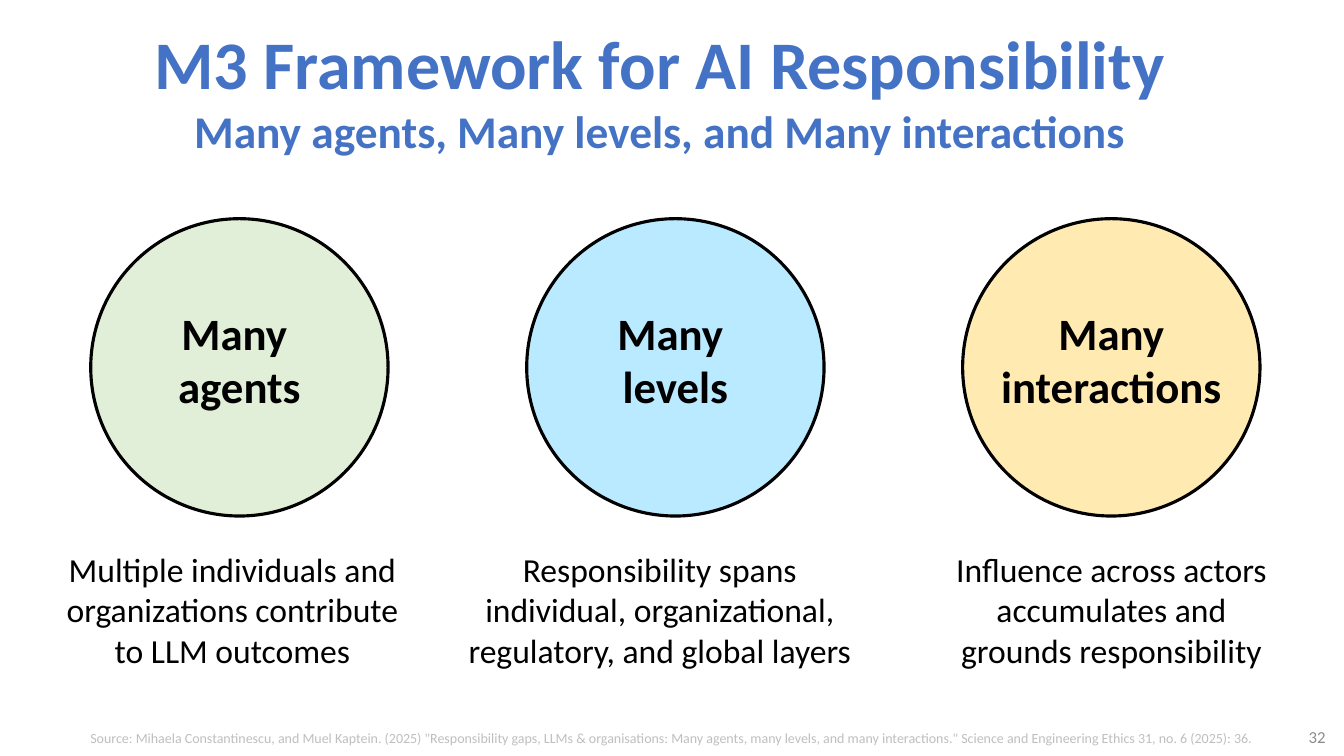
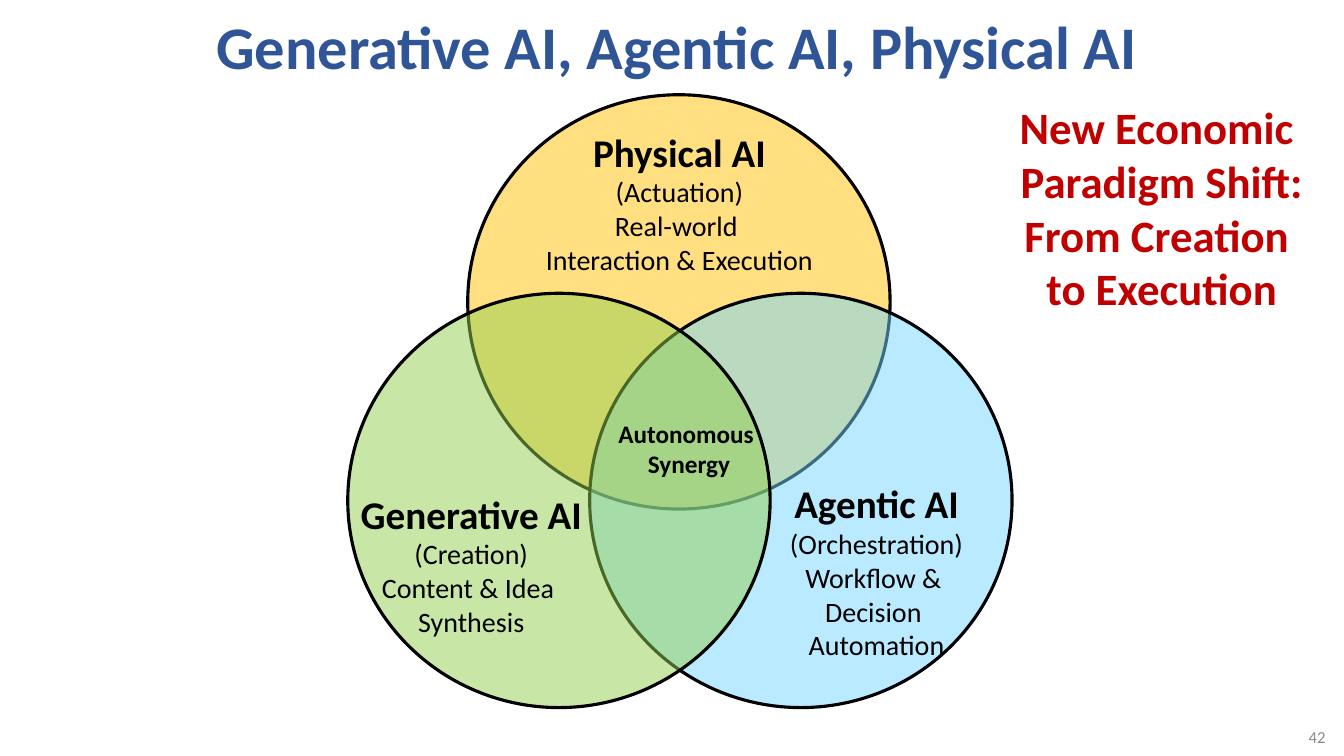
from pptx import Presentation
from pptx.dml.color import RGBColor
from pptx.enum.shapes import MSO_SHAPE
from pptx.enum.text import MSO_ANCHOR, MSO_AUTO_SIZE, PP_ALIGN
from pptx.oxml.ns import qn
from pptx.util import Pt
from lxml import etree

OVAL = MSO_SHAPE.OVAL
TOP, MIDDLE = MSO_ANCHOR.TOP, MSO_ANCHOR.MIDDLE
CENTER, RIGHT = PP_ALIGN.CENTER, PP_ALIGN.RIGHT
FIXED = MSO_AUTO_SIZE.NONE
TITLE_ONLY = 5

BLACK, GRAY, PALE = "000000", "8C8C8C", "BFBFBF"
BLUE, NAVY, RED = "4472C4", "2F5597", "C00000"
SKY, MINT, SAND = "76D6FF", "C5E0B4", "FFD966"
GOLD, LIME = "FFC000", "92D050"


def color(code):
    return RGBColor.from_string(code)


def put(item, values):
    for name, value in values.items():
        setattr(item, name, value)


class Deck:
    font = "Calibri"
    edge = 2.25
    alpha = 50

    def __init__(self):
        self.prs = Presentation()
        put(self.prs, {"slide_width": Pt(960), "slide_height": Pt(540)})

    def start(self, number, lines, box, tint):
        """Add a slide with its title lines and page number."""
        layout = self.prs.slide_layouts[TITLE_ONLY]
        self.slide = self.prs.slides.add_slide(layout)
        title = self.slide.shapes.title
        left, top, width, height = map(Pt, box)
        put(title, {"left": left, "top": top, "width": width, "height": height})
        self.fill(title.text_frame, lines, tint, True, anchor=MIDDLE)
        self.text((878.4, 517, 75.6, 18.7), [(number, 12)], GRAY,
                  align=RIGHT, anchor=MIDDLE)

    def fill(self, frame, lines, tint=BLACK, bold=False, align=CENTER,
             anchor=TOP, wrap=True):
        """Write (text, size) or (text, size, bold) lines, one paragraph each."""
        put(frame, {"word_wrap": wrap, "auto_size": FIXED,
                    "vertical_anchor": anchor})
        for index, (text, size, *heavy) in enumerate(lines):
            para = frame.add_paragraph() if index else frame.paragraphs[0]
            para.text = text
            para.alignment = align
            for run in para.runs:
                put(run.font, {"name": self.font, "size": Pt(size),
                               "bold": heavy[0] if heavy else bold})
                run.font.color.rgb = color(tint)

    def text(self, box, lines, tint=BLACK, bold=False, **style):
        shape = self.slide.shapes.add_textbox(*map(Pt, box))
        self.fill(shape.text_frame, lines, tint, bold, **style)

    def circle(self, box, tint):
        """Draw a see-through oval with a black edge."""
        shape = self.slide.shapes.add_shape(OVAL, *map(Pt, box))
        shape.shadow.inherit = False
        shape.fill.solid()
        shape.fill.fore_color.rgb = color(tint)
        node = shape.fill._xPr.find(qn("a:solidFill"))[0]
        etree.SubElement(node, qn("a:alpha"), val=str(self.alpha * 1000))
        shape.line.color.rgb = color(BLACK)
        shape.line.width = Pt(self.edge)

    def topic(self, box, name, role, body, wrap=False):
        self.text(box, [(name, 28, True), (role, 20), (body, 20)], wrap=wrap)


def frame_slide(deck):
    deck.start("32", [("M3 Framework for AI Responsibility", 48.6),
                      ("Many agents, Many levels, and Many interactions", 32.4)],
               (64, 0.7, 814.4, 126.7), BLUE)
    size, step = 212.4, 311.4
    parts = [
        ("Many \vagents", MINT, 36.7, 258.5,
         "Multiple individuals and organizations contribute to LLM outcomes"),
        ("Many \vlevels", SKY, 315.4, 311.8,
         "Responsibility spans individual, organizational, "
         "regulatory, and global layers"),
        ("Many interactions", SAND, 664.6, 258.5,
         "Influence across actors accumulates and grounds responsibility"),
    ]
    for index, (name, tint, left, width, note) in enumerate(parts):
        x = 64.8 + index * step
        deck.circle((x, 156.2, size, size), tint)
        deck.text((x, 214.6, size, 85), [(name, 32)], bold=True)
        deck.text((left, 388.6, width, 94.3), [(note, 24)])
    deck.text((41.8, 517.7, 874.8, 19.4), [(
        'Source: Mihaela Constantinescu, and Muel Kaptein. (2025) '
        '"Responsibility gaps, LLMs & organisations: Many agents, many levels, '
        'and many interactions." Science and Engineering Ethics 31, no. 6 '
        '(2025): 36.', 10)], PALE)


def venn_slide(deck):
    deck.start("42", [("Generative AI, Agentic AI, Physical AI", 43.2)],
               (41.8, 10.8, 883.4, 42.5), NAVY)
    for x, y, tint in [(334.1, 67.7, GOLD), (421.2, 209.5, SKY),
                       (248.4, 209.5, LIME)]:
        deck.circle((x, y, 301.7, 295.9), tint)
    deck.topic((381.6, 87.8, 207.4, 113.8), "Physical AI", "(Actuation)",
               "Real-world \vInteraction & Execution")
    deck.topic((538.6, 339.1, 175, 138.2), "Agentic AI", "(Orchestration)",
               "Workflow & \vDecision \vAutomation", wrap=True)
    deck.topic((249.1, 346.3, 175, 113.8), "Generative AI", "(Creation)",
               "Content & Idea \vSynthesis")
    deck.text((434.2, 295.2, 115.9, 51.1), [("Autonomous \vSynergy", 18)],
              bold=True, wrap=False)
    deck.text((705.6, 67.7, 248.4, 162.7),
              [("New Economic \vParadigm Shift:", 32),
               ("From Creation \vto Execution", 32)], RED, True)


def main():
    deck = Deck()
    frame_slide(deck)
    venn_slide(deck)
    deck.prs.save("out.pptx")


if __name__ == "__main__":
    main()
